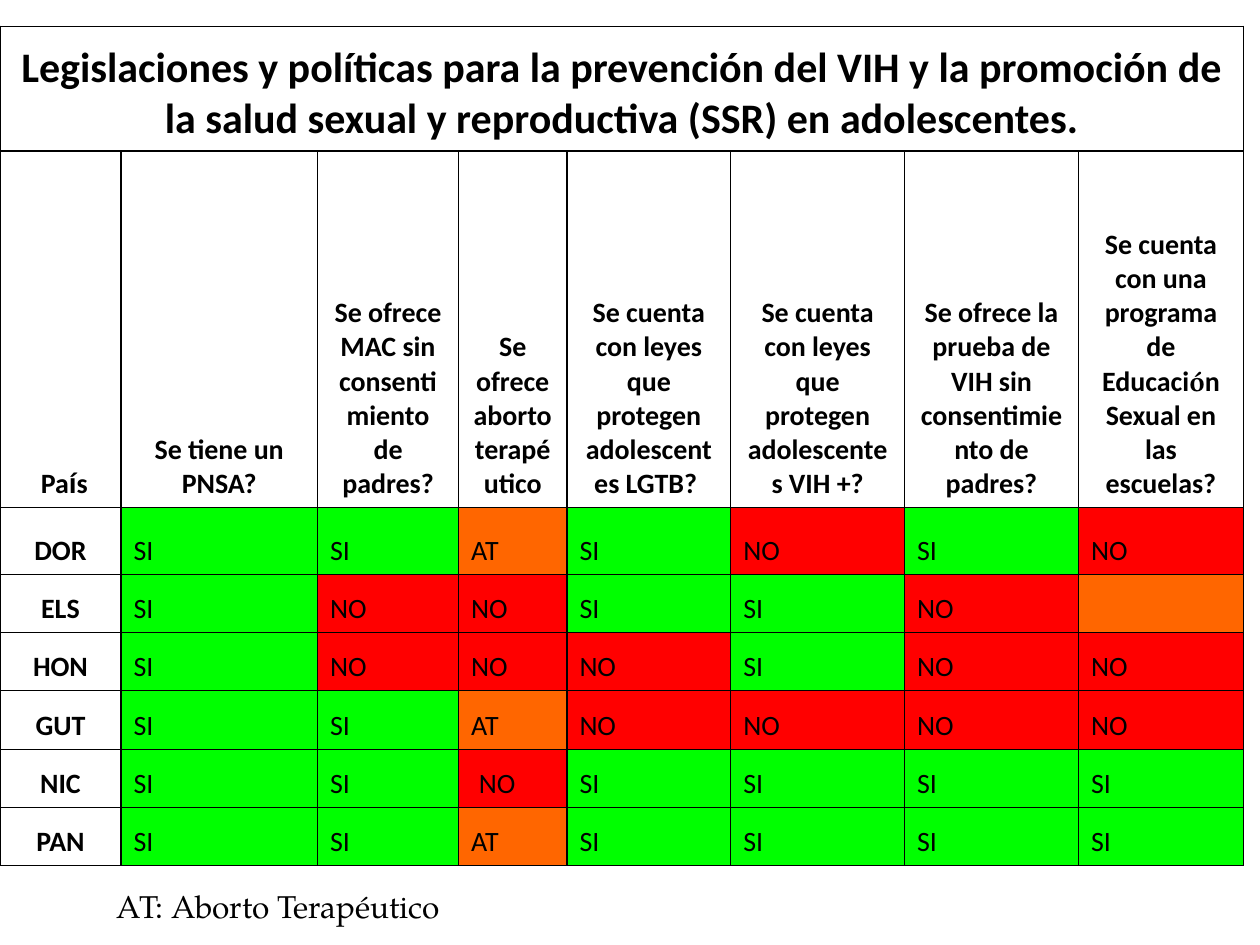
from lxml.etree import SubElement
from pptx import Presentation
from pptx.dml.color import RGBColor
from pptx.enum.text import MSO_ANCHOR as Anchor, MSO_AUTO_SIZE as AutoSize, PP_ALIGN as Align
from pptx.oxml.ns import qn
from pptx.util import Inches, Pt

BODY, SERIF, SYMBOL = "Calibri", "TeX Gyre Pagella", "Arial"
BLACK, WHITE = "000000", "FFFFFF"
GREEN, RED, ORANGE = "00FF00", "FF0000", "FF6600"

COLUMN_WIDTHS = [0.96, 1.56, 1.12, 0.86, 1.3, 1.38, 1.38, 1.31]
ROW_HEIGHTS = [0.99, 2.83, 0.53, 0.46, 0.46, 0.47, 0.46, 0.46]
TABLE_TOP = 0.21

TITLE = ("Legislaciones y políticas para la prevención del VIH y la promoción de "
         "la salud sexual y reproductiva (SSR) en adolescentes.")

# Each heading is a list of (text, font) runs
HEADINGS = [
    [(" ", SYMBOL), ("Pa", BODY), ("í", SYMBOL), ("s", BODY)],
    [("Se tiene un PNSA?", BODY)],
    [("Se ofrece MAC sin consentimiento de padres?", BODY)],
    [("Se ofrece aborto terapéutico", BODY)],
    [("Se cuenta con leyes que protegen adolescentes LGTB? ", BODY)],
    [("Se cuenta con leyes que protegen adolescentes VIH +?", BODY)],
    [("Se ofrece la prueba de VIH sin consentimiento de padres?", BODY)],
    [("Se cuenta con una programa de Educaci", BODY), ("ó", SERIF),
     ("n Sexual en las escuelas?", BODY)],
]

ANSWERS = {
    "DOR": ["SI", "SI", "AT", "SI", "NO", "SI", "NO"],
    "ELS": ["SI", "NO", "NO", "SI", "SI", "NO", ""],
    "HON": ["SI", "NO", "NO", "NO", "SI", "NO", "NO"],
    "GUT": ["SI", "SI", "AT", "NO", "NO", "NO", "NO"],
    "NIC": ["SI", "SI", " NO", "SI", "SI", "SI", "SI"],
    "PAN": ["SI", "SI", "AT", "SI", "SI", "SI", "SI"],
}
ANSWER_FILLS = {"SI": GREEN, "NO": RED, "AT": ORANGE, "": ORANGE}


def color(hex_code):
    return RGBColor.from_string(hex_code)


def add_run(paragraph, text, font, size, bold=False):
    run = paragraph.add_run()
    run.text = text
    run.font.name = font
    run.font.size = Pt(size)
    run.font.bold = bold
    run.font.color.rgb = color(BLACK)


def add_borders(cell):
    properties = cell._tc.get_or_add_tcPr()
    for index, side in enumerate(("lnL", "lnR", "lnT", "lnB")):
        line = SubElement(properties, qn(f"a:{side}"), w=str(Pt(1)))
        fill = SubElement(line, qn("a:solidFill"))
        SubElement(fill, qn("a:srgbClr"), val=BLACK)
        properties.insert(index, line)  # borders come before the fill


def fill_cell(cell, runs, size=16, bold=True, align=Align.CENTER, fill=WHITE):
    cell.vertical_anchor = Anchor.BOTTOM
    cell.fill.solid()
    cell.fill.fore_color.rgb = color(fill)
    paragraph = cell.text_frame.paragraphs[0]
    paragraph.alignment = align
    for text, font in runs:
        add_run(paragraph, text, font, size, bold)


def answer_runs(answer):
    word = answer.strip()
    indent = [(" ", SYMBOL)] if word != answer else []
    return indent + ([(word, BODY)] if word else [])


def add_policy_table(slide):
    shape = slide.shapes.add_table(
        len(ROW_HEIGHTS), len(COLUMN_WIDTHS), 0, Inches(TABLE_TOP),
        Inches(sum(COLUMN_WIDTHS)), Inches(sum(ROW_HEIGHTS)))
    table = shape.table
    table.first_row = table.horz_banding = False
    for column, width in zip(table.columns, COLUMN_WIDTHS):
        column.width = Inches(width)
    for row, height in zip(table.rows, ROW_HEIGHTS):
        row.height = Inches(height)

    # Title across all columns, then the questions
    table.cell(0, 0).merge(table.cell(0, len(COLUMN_WIDTHS) - 1))
    fill_cell(table.cell(0, 0), [(TITLE, BODY)], size=24)
    for column, runs in enumerate(HEADINGS):
        fill_cell(table.cell(1, column), runs)

    # One row of answers per country
    for row, (country, answers) in enumerate(ANSWERS.items(), start=2):
        fill_cell(table.cell(row, 0), [(country, BODY)])
        for column, answer in enumerate(answers, start=1):
            fill_cell(table.cell(row, column), answer_runs(answer), bold=False,
                      align=Align.LEFT, fill=ANSWER_FILLS[answer.strip()])

    for cell in table.iter_cells():
        add_borders(cell)


def add_footnote(slide, text):
    box = slide.shapes.add_textbox(Inches(0.83), Inches(6.99), Inches(3.15), Inches(0.4))
    frame = box.text_frame
    frame.word_wrap = True
    frame.auto_size = AutoSize.SHAPE_TO_FIT_TEXT
    add_run(frame.paragraphs[0], text, SERIF, 18)


def main():
    presentation = Presentation()
    presentation.slide_width, presentation.slide_height = Inches(10), Inches(7.5)
    slide = presentation.slides.add_slide(presentation.slide_layouts[6])
    add_footnote(slide, "AT: Aborto Terapéutico")
    add_policy_table(slide)
    presentation.save("out.pptx")


if __name__ == "__main__":
    main()
